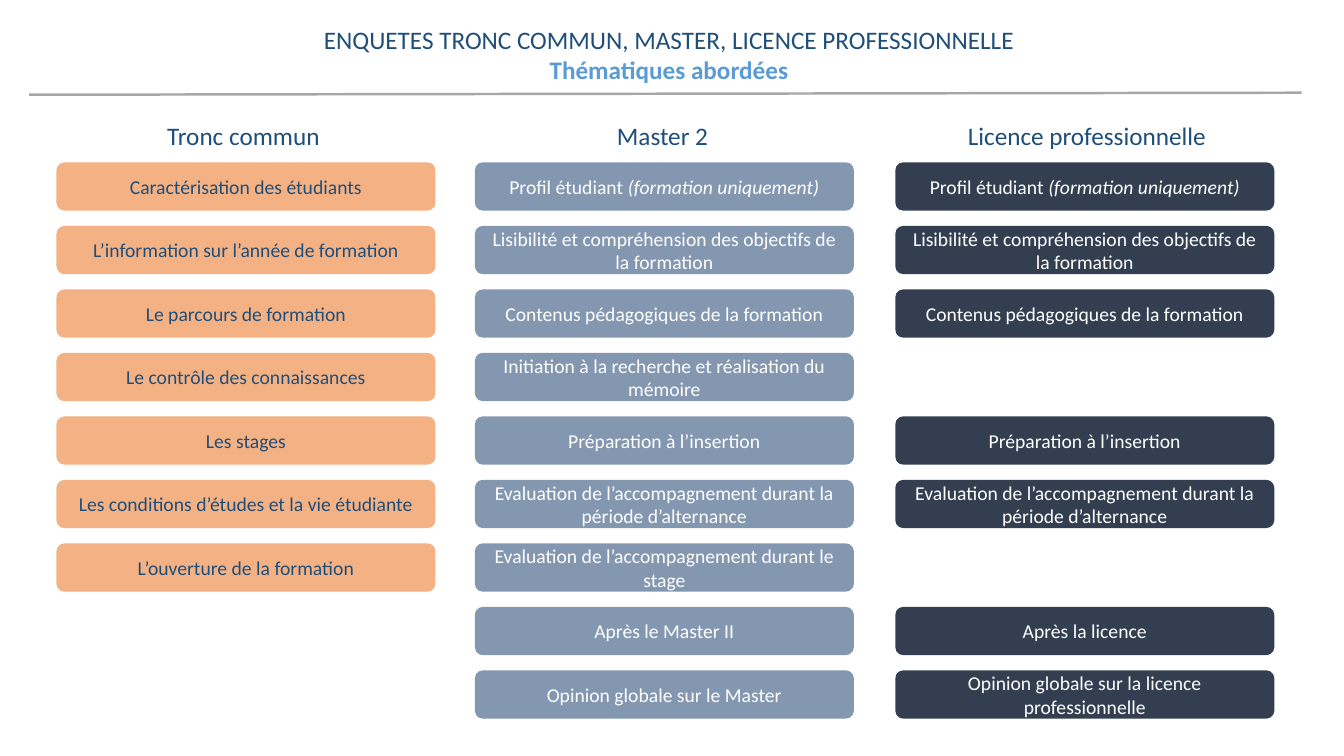
from dataclasses import dataclass

from lxml.etree import SubElement
from pptx import Presentation
from pptx.dml.color import RGBColor
from pptx.enum.shapes import MSO_CONNECTOR, MSO_SHAPE
from pptx.enum.text import MSO_ANCHOR as ANCHOR, PP_ALIGN as ALIGN
from pptx.oxml.ns import qn
from pptx.slide import Slide
from pptx.text.text import TextFrame
from pptx.util import Inches, Pt

COLORS = {
    "navy": "1F4E79",
    "blue": "5B9BD5",
    "rule": "A6A6A6",
    "orange": "F4B183",
    "slate": "8497B0",
    "dark": "333F50",
    "white": "FFFFFF",
}
FONT = "Calibri"
BOX_W, BOX_H = 3.76, 0.48
FIRST_TOP, ROW_STEP = 1.61, 0.63
HEADING_TOP, HEADING_H = 1.14, 0.4


@dataclass
class Column:
    heading: str
    heading_left: float
    heading_width: float
    left: float
    fill: str
    color: str
    themes: dict[int, str]


PROFILE, PROFILE_NOTE = "Profil étudiant ", "(formation uniquement)"
SHARED = {
    0: PROFILE,
    1: "Lisibilité et compréhension des objectifs de la formation",
    2: "Contenus pédagogiques de la formation",
    4: "Préparation à l’insertion",
    5: "Evaluation de l’accompagnement durant la période d’alternance",
}
COLUMNS = [
    Column("Tronc commun", 1.56, 1.73, 0.56, "orange", "navy", dict(enumerate([
        "Caractérisation des étudiants",
        "L’information sur l’année de formation",
        "Le parcours de formation",
        "Le contrôle des connaissances",
        "Les stages",
        "Les conditions d’études et la vie étudiante",
        "L’ouverture de la formation",
    ]))),
    Column("Master 2", 6.02, 1.12, 4.71, "slate", "white", SHARED | {
        3: "Initiation à la recherche et réalisation du mémoire",
        6: "Evaluation de l’accompagnement durant le stage",
        7: "Après le Master II",
        8: "Opinion globale sur le Master",
    }),
    Column("Licence professionnelle", 9.5, 2.59, 8.88, "dark", "white", SHARED | {
        7: "Après la licence",
        8: "Opinion globale sur la licence professionnelle",
    }),
]


def rgb(name: str) -> RGBColor:
    return RGBColor.from_string(COLORS[name])


def write(tf: TextFrame, text: str, *, size: float = 18, color: str = "navy",
          bold: bool = False, italic: bool = False,
          align: ALIGN = ALIGN.CENTER, new_line: bool = False) -> None:
    p = tf.add_paragraph() if new_line else tf.paragraphs[-1]
    p.alignment = align
    r = p.add_run()
    r.text = text
    r.font.name = FONT
    r.font.size = Pt(size)
    r.font.bold = bold
    r.font.italic = italic
    r.font.color.rgb = rgb(color)


def add_text_box(s: Slide, left: float, top: float, width: float,
                 height: float, wrap: bool) -> TextFrame:
    sp = s.shapes.add_textbox(Inches(left), Inches(top), Inches(width), Inches(height))
    sp.text_frame.word_wrap = wrap
    return sp.text_frame


def add_title(s: Slide) -> None:
    tf = add_text_box(s, 0.29, 0.19, 12.69, 0.71, True)
    write(tf, "ENQUETES TRONC COMMUN, MASTER, LICENCE PROFESSIONNELLE")
    write(tf, "Thématiques abordées", color="blue", bold=True, new_line=True)
    rule = s.shapes.add_connector(MSO_CONNECTOR.STRAIGHT, Inches(0.29), Inches(0.94),
                                  Inches(12.91), Inches(0.92))
    rule.line.color.rgb = rgb("rule")
    rule.line.width = Pt(1.75)
    SubElement(rule._element.spPr, qn("a:effectLst"))


def add_theme(s: Slide, col: Column, row: int, text: str) -> None:
    sp = s.shapes.add_shape(MSO_SHAPE.ROUNDED_RECTANGLE, Inches(col.left),
                            Inches(FIRST_TOP + row * ROW_STEP),
                            Inches(BOX_W), Inches(BOX_H))
    sp.shadow.inherit = False
    sp.fill.solid()
    sp.fill.fore_color.rgb = rgb(col.fill)
    sp.line.fill.background()
    tf = sp.text_frame
    tf.word_wrap = True
    tf.vertical_anchor = ANCHOR.MIDDLE
    write(tf, text, size=14, color=col.color)
    if text == PROFILE:
        write(tf, PROFILE_NOTE, size=14, color=col.color, italic=True)


def add_column(s: Slide, col: Column) -> None:
    tf = add_text_box(s, col.heading_left, HEADING_TOP, col.heading_width, HEADING_H, False)
    write(tf, col.heading, align=ALIGN.LEFT)
    for row, text in sorted(col.themes.items()):
        add_theme(s, col, row, text)


def main() -> None:
    prs = Presentation()
    prs.slide_width, prs.slide_height = Inches(13.33), Inches(7.5)
    s = prs.slides.add_slide(prs.slide_layouts[6])
    add_title(s)
    for col in COLUMNS:
        add_column(s, col)
    prs.save("out.pptx")


if __name__ == "__main__":
    main()
